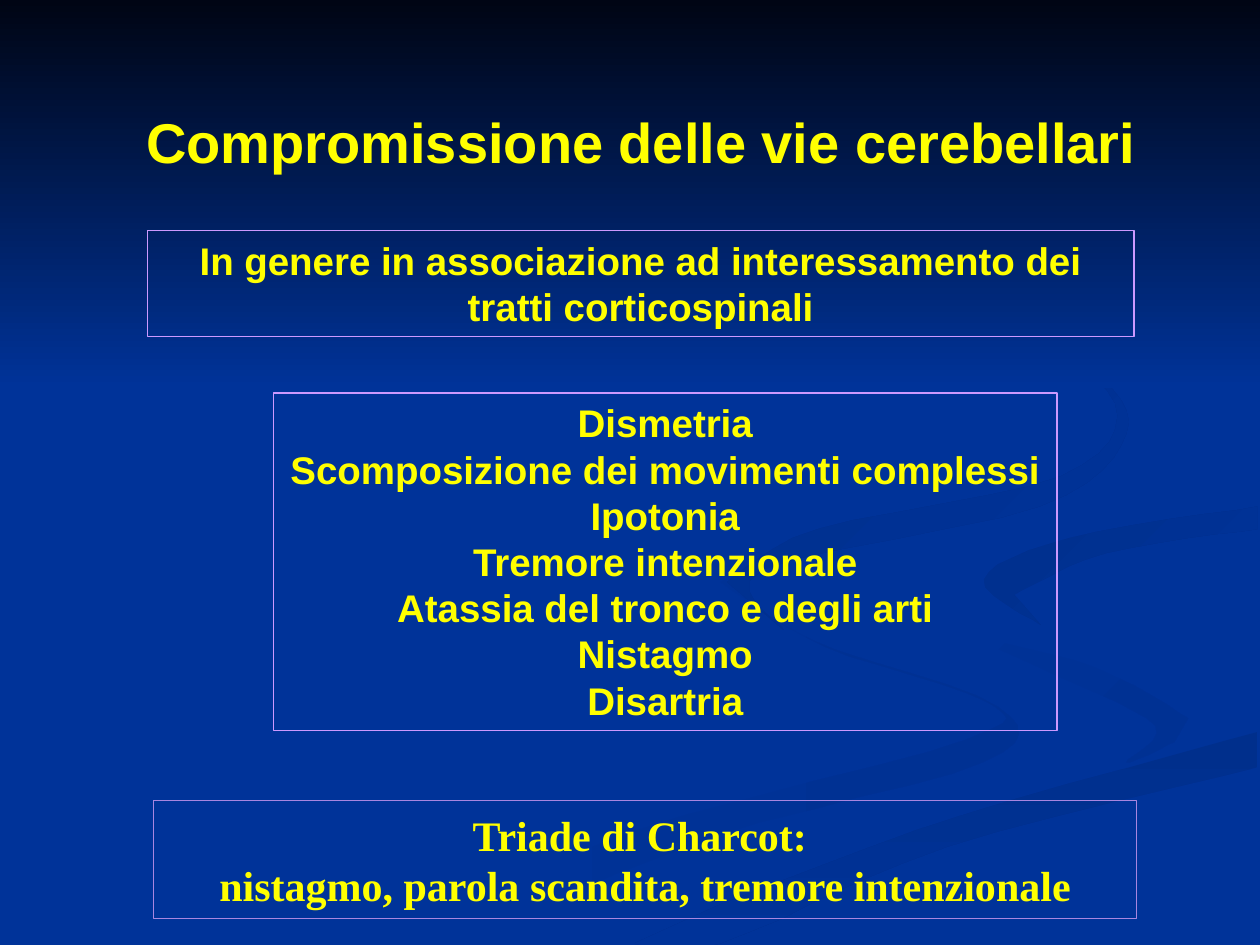
from pptx import Presentation, util as u
from pptx.dml.color import RGBColor
from pptx.enum import shapes, text
from pptx.oxml.xmlchemy import OxmlElement

# Content: box lines, one paragraph each
TITLE = "Compromissione delle vie cerebellari"
CONTEXT = ["In genere in associazione ad interessamento dei tratti corticospinali"]
SYMPTOMS = [
    "Dismetria",
    "Scomposizione dei movimenti complessi",
    "Ipotonia",
    "Tremore intenzionale",
    "Atassia del tronco e degli arti",
    "Nistagmo",
    "Disartria",
]
TRIAD = ["Triade di Charcot: ", "nistagmo, parola scandita, tremore intenzionale"]

THEME = dict(
    ground="003399", night="000514", ink="FFFF00", frame="CC99FF", triad_frame="A886E0",
    pale="003193", deep="002F8C",
    sans="Arial", serif="Times New Roman", title=32, body=22, triad=24, line=0.75,
)

# Places: left, top, width, height in percent of the slide
PLACES = dict(
    title=(10.6, 10.7, 84.9, 8.4),
    context=(11.7, 24.4, 78.3, 11.2),
    symptoms=(21.7, 41.6, 62.2, 35.7),
    triad=(12.2, 84.7, 78, 12.5),
)

# Background ribbons: two colours, clockwise angle, key points of the two edges (1/100 inch)
RIBBONS = [
    ("ground", "pale", 0,
     [(572, 462), (654, 513), (781, 556), (767, 587), (499, 661), (300, 749)],
     [(361, 749), (564, 665), (780, 605), (792, 561), (642, 507), (575, 460)]),
    ("ground", "pale", 45,
     [(943, 570), (870, 530), (758, 498), (724, 464)],
     [(733, 488), (838, 536), (917, 576), (894, 605), (932, 589)]),
    ("deep", "ground", 90,
     [(503, 749), (571, 749), (752, 672), (998, 609)],
     [(998, 581), (764, 647), (569, 719)]),
    ("deep", "ground", 45,
     [(998, 402), (849, 427), (781, 460), (826, 496)],
     [(805, 472), (878, 439), (998, 420)]),
    ("deep", "ground", 45,
     [(762, 233), (864, 291), (894, 344), (825, 402), (606, 452), (622, 500)],
     [(577, 462), (649, 420), (842, 378), (885, 320), (805, 254)]),
]
NIGHT_SKY = [(0, 0), (0, 308), (1000, 308), (1000, 0)]
STEPS = 6

prs = Presentation()
prs.slide_width, prs.slide_height = u.Inches(10), u.Inches(7.5)
s = prs.slides.add_slide(prs.slide_layouts[1])


def rgb(name):
    return RGBColor.from_string(THEME[name])


def bounds(name):
    x, y, w, h = PLACES[name]
    sw, sh = prs.slide_width / 100, prs.slide_height / 100
    return [u.Emu(round(v)) for v in (x * sw, y * sh, w * sw, h * sh)]


def place(sp, name):
    sp.left, sp.top, sp.width, sp.height = bounds(name)


def smooth(keys):
    """Catmull-Rom curve through the key points of one edge."""
    ends = [keys[0], *keys, keys[-1]]
    curve = []
    for a, b, c, d in zip(ends, ends[1:], ends[2:], ends[3:]):
        for t in (i / STEPS for i in range(STEPS)):
            curve.append(tuple(
                q + t * ((r - p) + t * ((2 * p - 5 * q + 4 * r - e)
                                        + t * (3 * q - p - 3 * r + e))) / 2
                for p, q, r, e in zip(a, b, c, d)))
    return curve + [keys[-1]]


def add_band(first, last, angle, outline, level):
    fb = s.shapes.build_freeform(*outline[0], scale=u.Inches(0.01))
    fb.add_line_segments(outline[1:], close=True)
    sp = fb.convert_to_shape()
    sp.shadow.inherit = False
    sp.line.fill.background()
    sp.fill.gradient()
    sp.fill.gradient_angle = -angle % 360
    for stop, colour in zip(sp.fill.gradient_stops, (first, last)):
        stop.color.rgb = rgb(colour)
    s.shapes.element.insert(2 + level, sp.element)  # behind the placeholders


def write(sp, lines, font, size, align, anchor=text.MSO_ANCHOR.TOP, wrap=True):
    tf = sp.text_frame
    tf.auto_size = text.MSO_AUTO_SIZE.NONE
    tf.word_wrap, tf.vertical_anchor = wrap, anchor
    for i, line in enumerate(lines):
        p = tf.add_paragraph() if i else tf.paragraphs[0]
        p.alignment, p.space_before = align, u.Pt(0)
        pPr = p._p.get_or_add_pPr()
        pPr.set("marL", "0")
        pPr.set("indent", "0")
        pPr.append(OxmlElement("a:buNone"))
        r = p.add_run()
        r.text = line
        r.font.name, r.font.size, r.font.bold = THEME[font], u.Pt(THEME[size]), True
        r.font.color.rgb = rgb("ink")


def outline_box(sp, colour):
    sp.fill.background()
    sp.line.color.rgb = rgb(colour)
    sp.line.width = u.Pt(THEME["line"])


def add_box(name, colour):
    sp = s.shapes.add_shape(shapes.MSO_SHAPE.RECTANGLE, *bounds(name))
    sp.shadow.inherit = False
    outline_box(sp, colour)
    return sp


# Background
s.background.fill.solid()
s.background.fill.fore_color.rgb = rgb("ground")
for level, (first, last, angle, out, back) in enumerate(RIBBONS):
    add_band(first, last, angle, smooth(out) + smooth(back), level)
add_band("night", "ground", 90, NIGHT_SKY, len(RIBBONS))

# Title and symptom list
title, symptoms = s.shapes.title, s.placeholders[1]
place(title, "title")
write(title, [TITLE], "sans", "title", text.PP_ALIGN.LEFT)
place(symptoms, "symptoms")
outline_box(symptoms, "frame")
write(symptoms, SYMPTOMS, "sans", "body", text.PP_ALIGN.CENTER)

# Framed notes above and below the list
write(add_box("context", "frame"), CONTEXT, "sans", "body", text.PP_ALIGN.CENTER)
write(add_box("triad", "triad_frame"), TRIAD, "serif", "triad", text.PP_ALIGN.CENTER,
      text.MSO_ANCHOR.MIDDLE, wrap=False)

prs.save("out.pptx")
